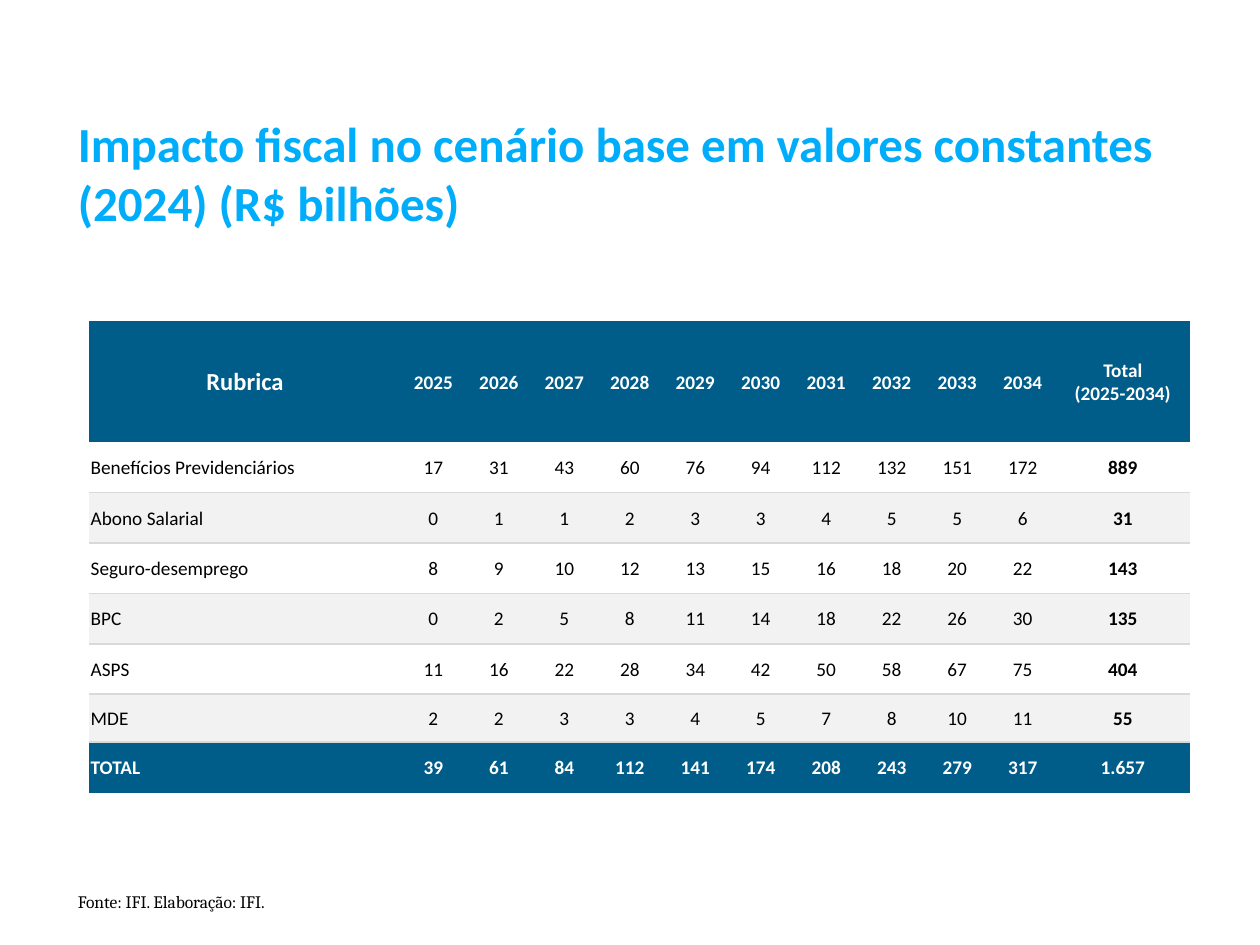
from lxml.etree import SubElement
from pptx import Presentation
from pptx.dml.color import RGBColor
from pptx.enum.text import MSO_ANCHOR, PP_ALIGN
from pptx.oxml.ns import qn
from pptx.util import Inches, Pt

COLORS = {"title": "00ADFA", "band": "005D89", "white": "FFFFFF",
          "stripe": "F2F2F2", "rule": "D9D9D9", "black": "000000"}
NO_STYLE = "{2D5ABB26-0587-4C30-8999-92F81FD0307C}"
COLUMNS = [2.47] + [0.52] * 10 + [1.07]
HEIGHTS = [0.96] + [0.4] * 5 + [0.38, 0.4]
ROWS = [
    ["Rubrica", *map(str, range(2025, 2035)), "Total\v(2025-2034)"],
    ["Benefícios Previdenciários", 17, 31, 43, 60, 76, 94, 112, 132, 151, 172, 889],
    ["Abono Salarial", 0, 1, 1, 2, 3, 3, 4, 5, 5, 6, 31],
    ["Seguro-desemprego", 8, 9, 10, 12, 13, 15, 16, 18, 20, 22, 143],
    ["BPC", 0, 2, 5, 8, 11, 14, 18, 22, 26, 30, 135],
    ["ASPS", 11, 16, 22, 28, 34, 42, 50, 58, 67, 75, 404],
    ["MDE", 2, 2, 3, 3, 4, 5, 7, 8, 10, 11, 55],
    ["TOTAL", 39, 61, 84, 112, 141, 174, 208, 243, 279, 317, "1.657"],
]
LAST_ROW = len(ROWS) - 1
LAST_COLUMN = len(COLUMNS) - 1


def color(name):
    """Return the named colour."""
    return RGBColor.from_string(COLORS[name])


def set_font(paragraph, name, size, color_name, bold=False):
    """Set the font of a whole paragraph."""
    font = paragraph.font
    font.name, font.size, font.bold = name, Pt(size), bold
    font.color.rgb = color(color_name)


def add_text(slide, text, left, top, width, height, *font):
    """Add a wrapping text box with one paragraph."""
    box = slide.shapes.add_textbox(*map(Inches, (left, top, width, height)))
    box.text_frame.word_wrap = True
    paragraph = box.text_frame.paragraphs[0]
    paragraph.text = text
    set_font(paragraph, *font)


def add_border(cell, side, color_name):
    """Draw a one-point border on one side of a cell."""
    line = SubElement(cell._tc.get_or_add_tcPr(), qn(f"a:{side}"), w=str(Pt(1)))
    fill = SubElement(line, qn("a:solidFill"))
    SubElement(fill, qn("a:srgbClr"), val=COLORS[color_name])


def fill_cell(cell, value, row, column):
    """Write and style a cell according to its row and column."""
    is_band = row in (0, LAST_ROW)
    cell.margin_left = cell.margin_right = cell.margin_top = Inches(0.01)
    cell.margin_bottom = 0
    cell.vertical_anchor = MSO_ANCHOR.MIDDLE
    if 1 < row < LAST_ROW:
        add_border(cell, "lnT", "rule")
    if 0 < row < LAST_ROW - 1:
        add_border(cell, "lnB", "rule")
    if row == LAST_ROW:
        add_border(cell, "lnB", "band")
    cell.fill.solid()
    cell.fill.fore_color.rgb = color(
        "band" if is_band else "white" if row % 2 else "stripe")
    paragraph = cell.text_frame.paragraphs[0]
    paragraph.text = str(value)
    paragraph.alignment = PP_ALIGN.JUSTIFY if row and not column else PP_ALIGN.CENTER
    set_font(paragraph, "Calibri", 11 if row or column else 14,
             "white" if is_band else "black", is_band or column == LAST_COLUMN)


def add_impact_table(slide, left, top):
    """Add the table of fiscal impact by item and year."""
    table = slide.shapes.add_table(
        len(ROWS), len(COLUMNS), Inches(left), Inches(top),
        Inches(sum(COLUMNS)), Inches(sum(HEIGHTS))).table
    table.first_row = table.horz_banding = False
    table._tbl.tblPr.find(qn("a:tableStyleId")).text = NO_STYLE
    for column, width in zip(table.columns, COLUMNS):
        column.width = Inches(width)
    for row, height in zip(table.rows, HEIGHTS):
        row.height = Inches(height)
    for row, values in enumerate(ROWS):
        for column, value in enumerate(values):
            fill_cell(table.cell(row, column), value, row, column)


def main():
    """Build and save the slide."""
    presentation = Presentation()
    presentation.slide_width, presentation.slide_height = Inches(10), Inches(7.5)
    slide = presentation.slides.add_slide(presentation.slide_layouts[6])
    add_text(slide, "Impacto fiscal no cenário base em valores constantes (2024) (R$ bilhões)",
             0.52, 0.85, 8.9, 1.04, "Calibri", 28, "title", True)
    add_text(slide, "Fonte: IFI. Elaboração: IFI.",
             0.52, 7.02, 4.35, 0.27, "Cambria", 10, "black")
    add_impact_table(slide, 0.71, 2.55)
    presentation.save("out.pptx")


if __name__ == "__main__":
    main()
